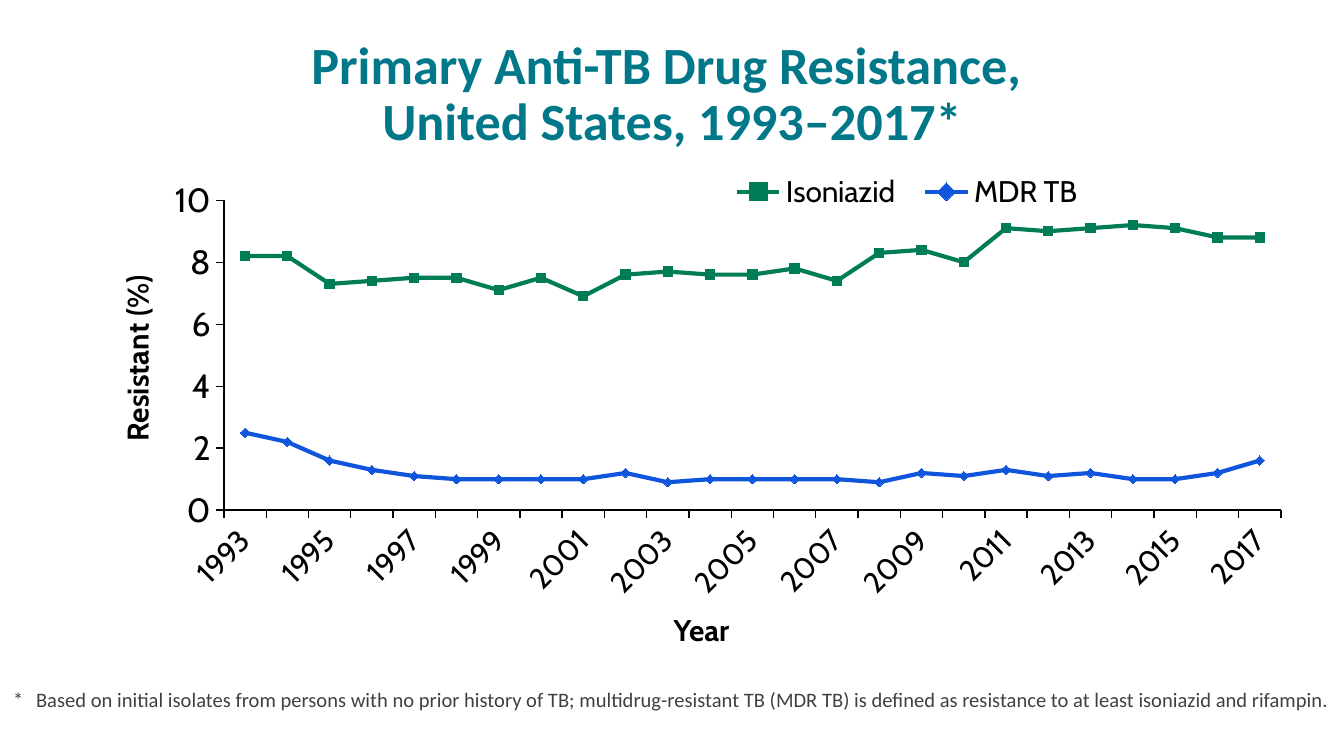
from lxml import etree
from pptx import Presentation
from pptx import util as u
from pptx.chart.data import CategoryChartData
from pptx.dml.color import RGBColor
from pptx.enum import chart as ch, text
from pptx.oxml.ns import qn

TITLE = "Primary Anti-TB Drug Resistance, \vUnited States, 1993–2017*"
FOOTNOTE = (
    "*\tBased on initial isolates from persons with no prior history of TB; "
    "multidrug-resistant TB (MDR TB) is defined as resistance to at least "
    "isoniazid and rifampin."
)
YEARS = [str(year) for year in range(1993, 2018)]
SERIES = [
    ("Isoniazid", "green", ch.XL_MARKER_STYLE.SQUARE,
     [8.2, 8.2, 7.3, 7.4, 7.5, 7.5, 7.1, 7.5, 6.9, 7.6, 7.7, 7.6, 7.6,
      7.8, 7.4, 8.3, 8.4, 8, 9.1, 9, 9.1, 9.2, 9.1, 8.8, 8.8]),
    ("MDR TB", "blue", ch.XL_MARKER_STYLE.DIAMOND,
     [2.5, 2.2, 1.6, 1.3, 1.1, 1, 1, 1, 1, 1.2, 0.9, 1, 1,
      1, 1, 0.9, 1.2, 1.1, 1.3, 1.1, 1.2, 1, 1, 1.2, 1.6]),
]
AXIS_TITLES = [
    ("Resistant (%)", (-1.27, 2.48, 4.58, 0.37), 270),
    ("Year", (4.49, 4.5, 1.46, 0.37), 0),
]
COLORS = {"teal": "00788A", "green": "007D57", "blue": "0F56DC",
          "gray": "404040", "black": "000000"}


def rgb(name):
    """Return a named colour."""
    return RGBColor.from_string(COLORS[name])


def style(font, name, size, color, bold=False):
    """Set the look of a font."""
    font.name, font.size, font.bold = name, u.Pt(size), bold
    font.color.rgb = rgb(color)


def add_text(s, content, box, name, size, color, bold=False):
    """Add a wrapping one-paragraph text box."""
    sp = s.shapes.add_textbox(*map(u.Inches, box))
    sp.text_frame.word_wrap = True
    p = sp.text_frame.paragraphs[0]
    p.text = content
    style(p.font, name, size, color, bold)
    return sp, p


def set_layout(parent, index, box, inner=False):
    """Place a chart part by fractions of the chart."""
    for old in parent.findall(qn("c:layout")):
        parent.remove(old)
    layout = etree.Element(qn("c:layout"))
    manual = etree.SubElement(layout, qn("c:manualLayout"))
    pairs = [("layoutTarget", "inner")] if inner else []
    pairs += [("xMode", "edge"), ("yMode", "edge"), *zip("xywh", box)]
    for tag, value in pairs:
        etree.SubElement(manual, qn(f"c:{tag}")).set("val", str(value))
    parent.insert(index, layout)


def add_chart(s):
    """Add the resistance line chart."""
    data = CategoryChartData(number_format="0.0")
    data.categories = YEARS
    for name, _, _, values in SERIES:
        data.add_series(name, values)
    box = map(u.Inches, (1.13, 1.26, 8.58, 3.69))
    chart = s.shapes.add_chart(ch.XL_CHART_TYPE.LINE_MARKERS, *box, data).chart
    style(chart.font, "Cabin", 18, "black")
    chart.has_title = False
    plot = chart.plots[0]
    plot.vary_by_categories = False
    for series, (_, color, marker, _) in zip(plot.series, SERIES):
        series.smooth = False
        series.format.line.color.rgb = rgb(color)
        series.format.line.width = u.Pt(2.25)
        series.marker.style, series.marker.size = marker, 5
        series.marker.format.fill.solid()
        series.marker.format.fill.fore_color.rgb = rgb(color)
        series.marker.format.line.color.rgb = rgb(color)

    years, percent = chart.category_axis, chart.value_axis
    for axis, size in ((years, 16), (percent, 18)):
        axis.has_major_gridlines = False
        axis.major_tick_mark = ch.XL_TICK_MARK.OUTSIDE
        axis.format.line.color.rgb = rgb("black")
        axis.format.line.width = u.Pt(0.75)
        style(axis.tick_labels.font, "Cabin", size, "black")
    percent.minimum_scale, percent.maximum_scale, percent.major_unit = 0, 10, 2
    percent.tick_labels.number_format = "#,##0"
    percent.tick_labels.number_format_is_linked = False
    cat = years._element
    cat.find(qn("c:txPr")).find(qn("a:bodyPr")).set("rot", "-2700000")
    skip = etree.Element(qn("c:tickLblSkip"))
    skip.set("val", "2")
    cat.find(qn("c:noMultiLvlLbl")).addprevious(skip)

    chart.has_legend = True
    legend = chart.legend
    legend.position = ch.XL_LEGEND_POSITION.BOTTOM
    legend.include_in_layout = False
    style(legend.font, "Cabin", 16, "black")
    set_layout(legend._element, 1, (0.49, 0.01, 0.33, 0.07))
    area = chart._chartSpace.chart.plotArea
    set_layout(area, 0, (1 / 16, 1 / 16, 11 / 12, 5 / 8), inner=True)


def main():
    """Build the slide."""
    prs = Presentation()
    prs.slide_width = u.Inches(10)
    prs.slide_height = prs.slide_width * 9 // 16
    s = prs.slides.add_slide(prs.slide_layouts[5])

    title = s.shapes.title
    title.left, title.top, title.width, title.height = map(
        u.Inches, (0.5, 0.23, 9, 0.94))
    tf = title.text_frame
    tf.text = TITLE
    tf.vertical_anchor = text.MSO_ANCHOR.BOTTOM
    p = tf.paragraphs[0]
    p.alignment, p.line_spacing = text.PP_ALIGN.CENTER, u.Pt(30)
    style(p.font, "Calibri", 28, "teal", True)

    sp, p = add_text(s, FOOTNOTE, (0, 5.06, 10, 0.48), "Calibri", 11, "gray")
    sp.text_frame.margin_right = 0
    indent = u.Inches(0.17)
    p._p.get_or_add_pPr().set("marL", str(indent))
    p._p.get_or_add_pPr().set("indent", str(-indent))

    add_chart(s)
    for label, box, angle in AXIS_TITLES:
        sp, p = add_text(s, label, box, "Cabin", 16, "black", True)
        sp.rotation = angle
        p.alignment = text.PP_ALIGN.CENTER
    prs.save("out.pptx")


if __name__ == "__main__":
    main()
